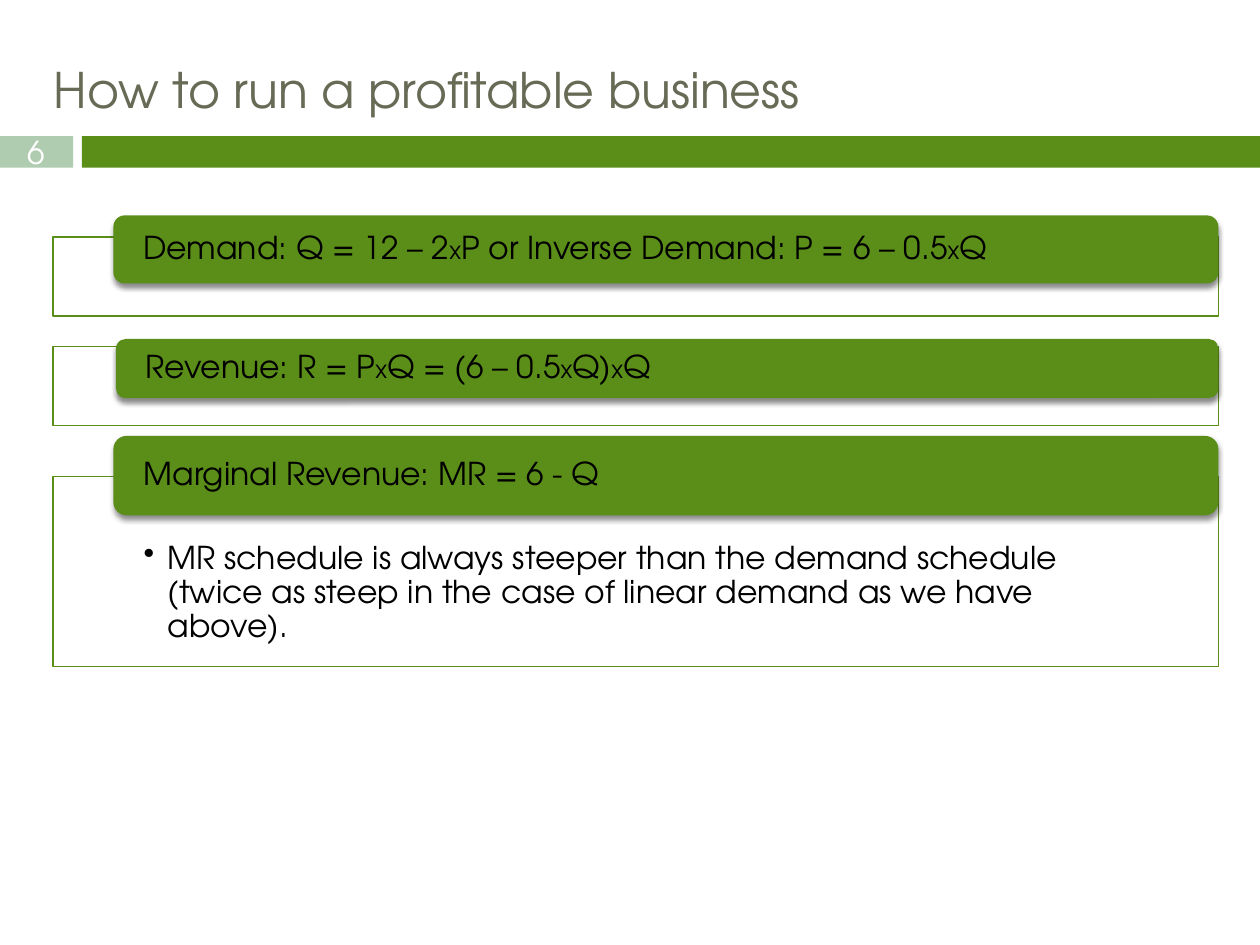
from lxml import etree
from pptx import Presentation
from pptx import util as u
from pptx.dml.color import RGBColor
from pptx.enum import shapes, text
from pptx.oxml import ns

FONT = "TeX Gyre Adventor"
GREEN, SAGE, OLIVE, WHITE, BLACK = "5A8E19", "B0CCB0", "676A55", "FFFFFF", "000000"
FRAME_LEFT, FRAME_WIDTH = 0.42, 9.25
FRAME_RIGHT = FRAME_LEFT + FRAME_WIDTH

# Per step: frame top and height, bar left, top and height, formula, note
STEPS = [
    (1.88, 0.63, 0.9, 1.71, 0.54,
     "Demand: Q = 12 – 2xP or Inverse Demand: P = 6 – 0.5xQ", None),
    (2.75, 0.63, 0.92, 2.69, 0.47, "Revenue: R = PxQ = (6 – 0.5xQ)xQ", None),
    (3.78, 1.51, 0.9, 3.46, 0.63, "Marginal Revenue: MR = 6 - Q",
     "MR schedule is always steeper than the demand schedule "
     "(twice as steep in the case of linear demand as we have above)."),
]


def color(hex_value):
    return RGBColor.from_string(hex_value)


def add_xml(parent, tag, **attributes):
    return etree.SubElement(parent, ns.qn(tag), attributes)


def add_box(slide, left, top, width, height, fill, rounded=False):
    kind = shapes.MSO_SHAPE.ROUNDED_RECTANGLE if rounded else shapes.MSO_SHAPE.RECTANGLE
    box = slide.shapes.add_shape(kind, *map(u.Inches, (left, top, width, height)))
    box.shadow.inherit = False
    box.fill.solid()
    box.fill.fore_color.rgb = color(fill)
    box.line.fill.background()
    return box


def set_up_text(shape, insets, anchor):
    frame = shape.text_frame
    frame.word_wrap = True
    frame.vertical_anchor = anchor
    (frame.margin_left, frame.margin_top,
     frame.margin_right, frame.margin_bottom) = map(u.Inches, insets)
    return frame.paragraphs[0]


def style(paragraph, size, hex_value, align=text.PP_ALIGN.LEFT):
    paragraph.alignment = align
    paragraph.font.name = FONT
    paragraph.font.size = u.Pt(size)
    paragraph.font.color.rgb = color(hex_value)


def space_lines(paragraph, after_percent):
    paragraph.line_spacing = 0.9
    after = add_xml(paragraph._p.get_or_add_pPr(), "a:spcAft")
    add_xml(after, "a:spcPct", val=str(after_percent * 1000))


def add_frame(slide, top, height, note):
    frame = add_box(slide, FRAME_LEFT, top, FRAME_WIDTH, height, WHITE)
    add_xml(frame.fill._xPr.find(".//" + ns.qn("a:srgbClr")), "a:alpha", val="90000")
    frame.line.color.rgb = color(GREEN)
    frame.line.width = u.Pt(0.79)
    if note:
        paragraph = set_up_text(frame, (0.72, 0.52, 0.72, 0.14), text.MSO_ANCHOR.TOP)
        paragraph.text = note
        space_lines(paragraph, 15)
        properties = paragraph._p.get_or_add_pPr()
        properties.set("marL", str(u.Inches(0.19)))
        properties.set("indent", str(-u.Inches(0.19)))
        add_xml(properties, "a:buChar", char="•")
        style(paragraph, 18, BLACK)


def add_formula_bar(slide, left, top, height, formula):
    bar = add_box(slide, left, top, FRAME_RIGHT - left, height, GREEN, rounded=True)
    # Soft shadow straight below the bar
    effects = bar._element.spPr.find(ns.qn("a:effectLst"))
    shadow = add_xml(effects, "a:outerShdw", blurRad=str(u.Pt(3)),
                     dist=str(u.Pt(2.4)), dir="5400000", rotWithShape="0")
    add_xml(add_xml(shadow, "a:srgbClr", val=BLACK), "a:alpha", val="45000")

    # Multiplication signs are a smaller x between the terms
    paragraph = set_up_text(bar, (0.21, 0, 0.21, 0), text.MSO_ANCHOR.MIDDLE)
    for index, term in enumerate(formula.split("x")):
        if index:
            times = paragraph.add_run()
            times.text = "x"
            times.font.size = u.Pt(14)
        paragraph.add_run().text = term
    space_lines(paragraph, 35)
    style(paragraph, 18, BLACK)


def add_header(slide):
    # Band with the slide number
    add_box(slide, 0.65, 1.08, 9.35, 0.25, GREEN)
    number_box = add_box(slide, 0, 1.08, 0.58, 0.25, SAGE)
    number = set_up_text(number_box, (0, 0, 0, 0), text.MSO_ANCHOR.MIDDLE)
    number.text = "6"
    style(number, 18, WHITE, text.PP_ALIGN.CENTER)

    # Title
    title_box = slide.shapes.add_textbox(*map(u.Inches, (0.33, 0.42, 9.25, 0.65)))
    title = set_up_text(title_box, (0.1, 0.05, 0.1, 0.05), text.MSO_ANCHOR.TOP)
    title.text = "How to run a profitable business"
    style(title, 28, OLIVE)


def main():
    deck = Presentation()
    deck.slide_width, deck.slide_height = u.Inches(10), u.Inches(7.5)
    slide = deck.slides.add_slide(deck.slide_layouts[6])
    add_header(slide)
    for frame_top, frame_height, bar_left, bar_top, bar_height, formula, note in STEPS:
        add_frame(slide, frame_top, frame_height, note)
        add_formula_bar(slide, bar_left, bar_top, bar_height, formula)
    deck.save("out.pptx")


if __name__ == "__main__":
    main()
